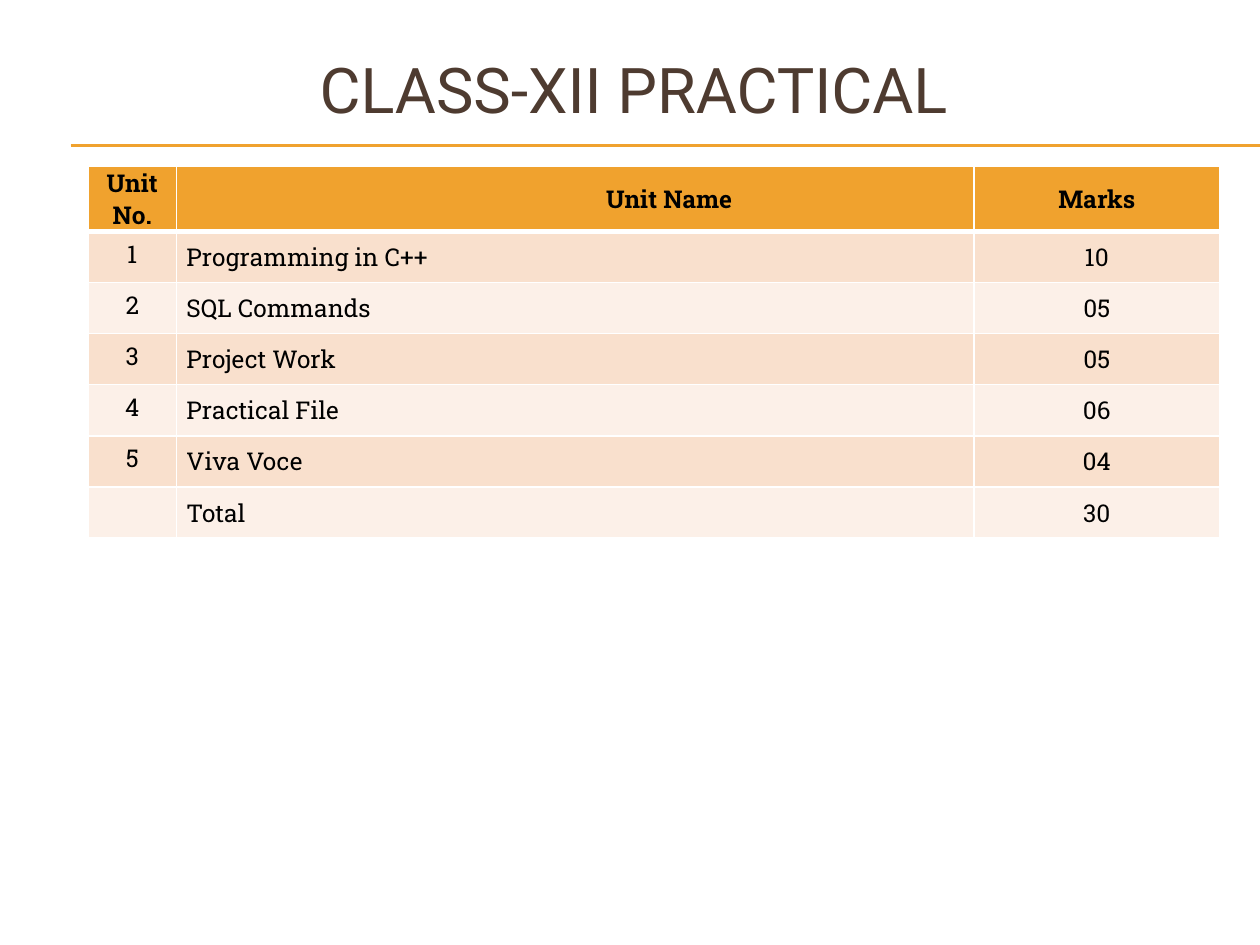
from dataclasses import dataclass

from lxml.etree import SubElement
from pptx import Presentation
from pptx.dml.color import RGBColor
from pptx.enum.text import MSO_ANCHOR, MSO_AUTO_SIZE, PP_ALIGN
from pptx.enum.shapes import MSO_CONNECTOR
from pptx.oxml.ns import qn
from pptx.util import Inches, Pt


@dataclass(frozen=True)
class Theme:
    accent: str = "F0A22E"
    heading: str = "4E3B30"
    text: str = "000000"
    grid: str = "FFFFFF"
    bands: tuple = ("F9E0CD", "FCF0E8")
    title_font: str = "Roboto"
    table_font: str = "Roboto Slab"
    title_size: int = 36
    table_size: int = 14


THEME = Theme()
HEADER = ("Unit No.", "Unit Name", "Marks")
UNITS = [
    ("1", "Programming in C++", "10"),
    ("2", "SQL Commands", "05"),
    ("3", "Project Work", "05"),
    ("4", "Practical File", "06"),
    ("5", "Viva Voce", "04"),
    ("", "Total", "30"),
]
COLUMN_WIDTHS = (0.7, 6.33, 1.95)
ZERO_MARGINS = dict.fromkeys(
    ("margin_left", "margin_right", "margin_top", "margin_bottom"), 0)


def apply_format(target, values):
    for attribute, value in values.items():
        setattr(target, attribute, value)


def color_font(font, color, **values):
    apply_format(font, values)
    font.color.rgb = RGBColor.from_string(color)


def place_title(slide, box, wording):
    title = slide.shapes.title
    apply_format(title, dict(zip(("left", "top", "width", "height"), box)))
    frame = title.text_frame
    frame.text = wording
    apply_format(frame, {"vertical_anchor": MSO_ANCHOR.MIDDLE,
                         "auto_size": MSO_AUTO_SIZE.NONE, "word_wrap": True})
    paragraph = frame.paragraphs[0]
    paragraph.alignment = PP_ALIGN.CENTER
    color_font(paragraph.runs[0].font, THEME.heading,
               name=THEME.title_font, size=Pt(THEME.title_size))


def place_double_rule(slide, box):
    left, top, width, gap = box
    for y in (top, top + gap):
        rule = slide.shapes.add_connector(
            MSO_CONNECTOR.STRAIGHT, left, y, left + width, y)
        rule.line.width = Pt(0.75)
        rule.line.color.rgb = RGBColor.from_string(THEME.accent)
        SubElement(rule._element.spPr, qn("a:effectLst"))


def set_borders(cell, widths):
    properties = cell._tc.get_or_add_tcPr()
    for side, width in widths.items():
        line = SubElement(properties, qn(f"a:ln{side}"), w=str(Pt(width)))
        fill = SubElement(line, qn("a:solidFill"))
        SubElement(fill, qn("a:srgbClr"), val=THEME.grid)


def cell_format(row, column, wording):
    """Unit numbers keep the default margins and sit at the top."""
    if row and column == 0 and wording:
        return {}
    values = {**ZERO_MARGINS, "vertical_anchor": MSO_ANCHOR.MIDDLE}
    if column == 1:
        indent = {"margin_left": Inches(0.08)} if row else {"margin_right": Inches(1.92)}
        values.update(indent)
    return values


def fill_cell(cell, row, column, wording):
    # Borders come first so that the fill follows them in the XML
    set_borders(cell, {"L": 1, "R": 1, "T": 3 if row == 1 else 1,
                       "B": 3 if row == 0 else 1})
    cell.fill.solid()
    background = THEME.bands[(row - 1) % 2] if row else THEME.accent
    cell.fill.fore_color.rgb = RGBColor.from_string(background)
    apply_format(cell, cell_format(row, column, wording))
    if not wording:
        return
    paragraph = cell.text_frame.paragraphs[0]
    name_alignment = PP_ALIGN.LEFT if row else PP_ALIGN.RIGHT
    paragraph.alignment = name_alignment if column == 1 else PP_ALIGN.CENTER
    run = paragraph.add_run()
    run.text = wording
    color_font(run.font, THEME.text, name=THEME.table_font,
               size=Pt(THEME.table_size), bold=row == 0)


def place_marks_table(slide, box):
    rows = [HEADER, *UNITS]
    table = slide.shapes.add_table(len(rows), len(HEADER), *box).table
    for column, width in zip(table.columns, COLUMN_WIDTHS):
        column.width = Inches(width)
    for row, wordings in enumerate(rows):
        for column, wording in enumerate(wordings):
            fill_cell(table.cell(row, column), row, column, wording)


def main():
    presentation = Presentation()
    presentation.slide_width, presentation.slide_height = Inches(10), Inches(7.5)
    slide = presentation.slides.add_slide(presentation.slide_layouts[5])

    # Heading
    place_double_rule(slide, (Inches(0.56), Inches(1.15), Inches(9.44), Inches(0.01)))
    place_title(slide, (Inches(0.78), Inches(0.23), Inches(8.5), Inches(0.94)),
                "CLASS-XII PRACTICAL")

    # Units and marks; the two-line header row grows to fit
    place_marks_table(slide, (Inches(0.7), Inches(1.32), Inches(8.98), Inches(2.84)))
    presentation.save("out.pptx")


if __name__ == "__main__":
    main()
